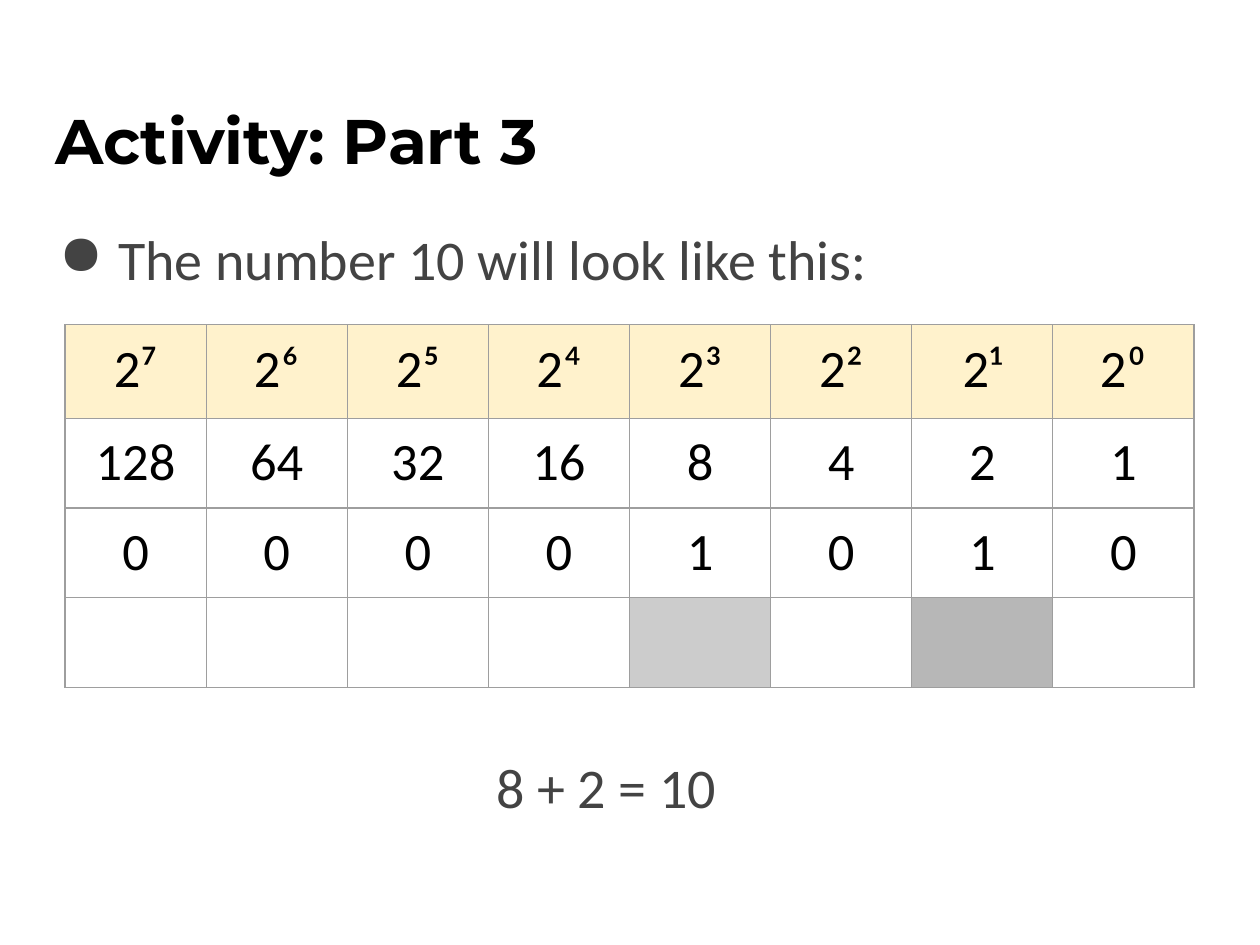
from dataclasses import dataclass

from lxml import etree
from pptx import Presentation
from pptx.dml.color import RGBColor
from pptx.enum.text import MSO_ANCHOR, PP_ALIGN
from pptx.oxml.ns import qn
from pptx.util import Cm, Pt

LEFT, CENTER = PP_ALIGN.LEFT, PP_ALIGN.CENTER
TOP, MIDDLE = MSO_ANCHOR.TOP, MSO_ANCHOR.MIDDLE
TITLE_ONLY = 5
NUMBER = 10
BITS = 8
SUPERSCRIPTS = "⁰¹²³⁴⁵⁶⁷"


@dataclass(frozen=True)
class Theme:
    heading_font: str = "Montserrat"
    body_font: str = "Calibri"
    title_size: int = 36
    body_size: int = 32
    table_size: int = 30
    border_width: float = 0.75
    black: str = "000000"
    body: str = "434343"
    border: str = "9E9E9E"
    header: str = "FFF2CC"
    eight: str = "CCCCCC"
    two: str = "B7B7B7"


THEME = Theme()


def add_bullet(paragraph, color):
    properties = paragraph._p.get_or_add_pPr()
    properties.set("marL", str(Cm(1.27)))
    properties.set("indent", str(Cm(-1.19)))
    bullet_color = etree.SubElement(properties, qn("a:buClr"))
    etree.SubElement(bullet_color, qn("a:srgbClr"), val=color)
    etree.SubElement(properties, qn("a:buChar"), char="●")


def write_text(frame, text, *, size, font=THEME.body_font, color=THEME.black,
               bold=False, align=LEFT, spacing=1.0, bullet=False):
    paragraph = frame.paragraphs[0]
    paragraph.text = text
    if bullet:
        add_bullet(paragraph, color)
    paragraph.alignment = align
    paragraph.line_spacing = spacing
    paragraph.font.name = font
    paragraph.font.size = Pt(size)
    paragraph.font.bold = bold
    paragraph.font.color.rgb = RGBColor.from_string(color)


def place_title(slide, text, left, top, width, height):
    title = slide.shapes.title
    title.left, title.top, title.width, title.height = left, top, width, height
    title.text_frame.vertical_anchor = MIDDLE
    write_text(title.text_frame, text, size=THEME.title_size,
               font=THEME.heading_font, bold=True)


def add_statement(slide, text, left, top, width, height, bullet=False):
    frame = slide.shapes.add_textbox(left, top, width, height).text_frame
    frame.word_wrap = True
    frame.vertical_anchor = TOP
    write_text(frame, text, size=THEME.body_size, color=THEME.body,
               spacing=1.1, bullet=bullet)


def add_borders(cell):
    properties = cell._tc.get_or_add_tcPr()
    for side in ("lnL", "lnR", "lnT", "lnB"):
        line = etree.SubElement(properties, qn(f"a:{side}"),
                                w=str(Pt(THEME.border_width)))
        fill = etree.SubElement(line, qn("a:solidFill"))
        etree.SubElement(fill, qn("a:srgbClr"), val=THEME.border)


def format_cell(cell, text, fill):
    cell.margin_left = cell.margin_right = Cm(0.25)
    cell.margin_top = cell.margin_bottom = Cm(0.25)
    add_borders(cell)
    if fill:
        cell.fill.solid()
        cell.fill.fore_color.rgb = RGBColor.from_string(fill)
    else:
        cell.fill.background()
    write_text(cell.text_frame, text, size=THEME.table_size, align=CENTER)


def add_binary_table(slide, left, top, width, header_height, row_height):
    powers = range(BITS - 1, -1, -1)
    rows = [
        [f"2{SUPERSCRIPTS[power]}" for power in powers],
        [str(2 ** power) for power in powers],
        list(format(NUMBER, f"0{BITS}b")),
        [""] * BITS,
    ]
    shades = {3: THEME.eight, 1: THEME.two}
    fills = [
        [THEME.header] * BITS,
        [None] * BITS,
        [None] * BITS,
        [shades.get(power) for power in powers],
    ]
    height = header_height + row_height * (len(rows) - 1)
    table = slide.shapes.add_table(len(rows), BITS, left, top, width, height).table
    table.first_row = table.horz_banding = False
    for column in table.columns:
        column.width = width // BITS
    for index, (texts, colors) in enumerate(zip(rows, fills)):
        table.rows[index].height = row_height if index else header_height
        for column, (text, fill) in enumerate(zip(texts, colors)):
            format_cell(table.cell(index, column), text, fill)


def main():
    presentation = Presentation()
    presentation.slide_width, presentation.slide_height = Cm(25.4), Cm(19.05)
    slide = presentation.slides.add_slide(presentation.slide_layouts[TITLE_ONLY])
    left, width = Cm(0.86), Cm(23.67)
    place_title(slide, "Activity: Part 3", left, Cm(1.65), width, Cm(2.31))
    add_statement(slide, "The number 10 will look like this:",
                  left, Cm(4.27), width, Cm(1.9), bullet=True)
    add_binary_table(slide, Cm(1.31), Cm(6.55), Cm(22.76), Cm(1.88), Cm(1.81))
    add_statement(slide, "8 + 2 = 10", Cm(9.75), Cm(14.91), Cm(14.78), Cm(1.9))
    presentation.save("out.pptx")


if __name__ == "__main__":
    main()
